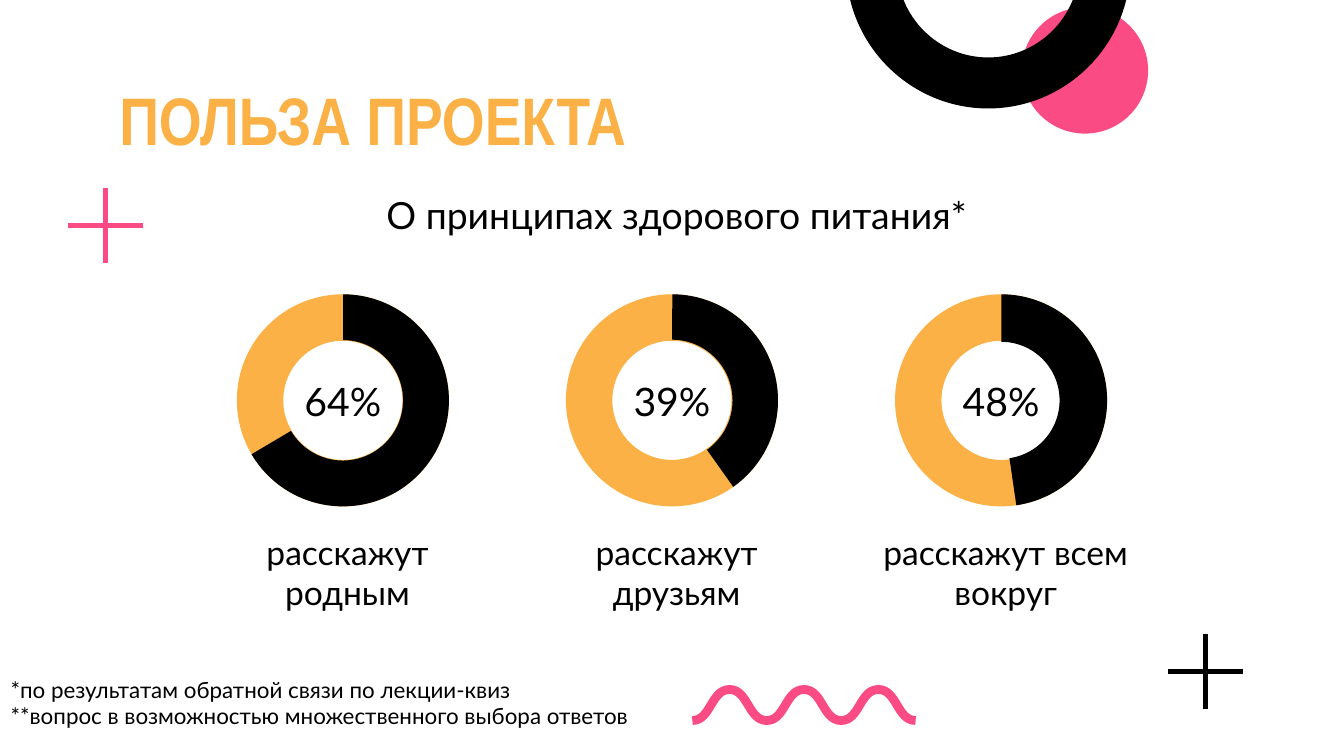
from dataclasses import dataclass

from lxml.etree import SubElement
from pptx import Presentation
from pptx.dml.color import RGBColor
from pptx.enum.shapes import MSO_CONNECTOR, MSO_SHAPE
from pptx.enum.text import MSO_ANCHOR, PP_ALIGN
from pptx.oxml.ns import qn
from pptx.util import Pt


@dataclass(frozen=True)
class Theme:
    orange: RGBColor = RGBColor(0xFB, 0xB1, 0x46)
    pink: RGBColor = RGBColor(0xFA, 0x4B, 0x84)
    black: RGBColor = RGBColor(0, 0, 0)
    heading_font: str = "Arial Narrow"
    body_font: str = "Lato"
    title_size: int = 36
    percent_size: int = 21
    subtitle_size: int = 20
    caption_size: int = 18
    note_size: int = 12


theme = Theme()
deck = Presentation()
deck.slide_width, deck.slide_height = Pt(720), Pt(405)
page = deck.slides.add_slide(deck.slide_layouts[5])
shapes = page.shapes


def add_text(left, top, width, height, lines, size, align=PP_ALIGN.CENTER, anchor=MSO_ANCHOR.MIDDLE):
    frame = shapes.add_textbox(Pt(left), Pt(top), Pt(width), Pt(height)).text_frame
    frame.word_wrap = True
    frame.vertical_anchor = anchor
    frame.margin_left = frame.margin_right = frame.margin_top = frame.margin_bottom = Pt(7.2)
    frame.text = "\n".join(lines)
    for para in frame.paragraphs:
        para.alignment = align
        para.font.name = theme.body_font
        para.font.size = Pt(size)
        para.font.color.rgb = theme.black
    return frame


def add_curve(start, segments, close):
    """Draw segments of one point as lines and of three points as Bézier curves."""
    builder = shapes.build_freeform(Pt(start[0]), Pt(start[1]))
    points = [(Pt(x), Pt(y)) for segment in segments for x, y in segment]
    builder.add_line_segments(points, close=close)
    shape = builder.convert_to_shape()
    shape.shadow.inherit = False
    lines = iter(list(shape._element.iter(qn("a:lnTo"))))
    for segment in segments:
        parts = [next(lines) for _ in segment]
        if len(parts) == 3:
            curve = SubElement(parts[0].getparent(), qn("a:cubicBezTo"))
            parts[0].addprevious(curve)
            for part in parts:
                curve.append(part[0])
                part.getparent().remove(part)
    return shape


# Corner decoration: a pink disc behind a black half ring
disc = shapes.add_shape(MSO_SHAPE.OVAL, Pt(547.4), Pt(3.9), Pt(67.7), Pt(67.7))
disc.shadow.inherit = False
disc.fill.solid()
disc.fill.fore_color.rgb = theme.pink
disc.line.fill.background()

ring_x, ring_y = 529.4, -18
ring_segments = []
for radius, side in [(76.1, 1), (48.8, -1)]:
    pull = radius * 0.55
    start_x, end_x, bottom = ring_x + side * radius, ring_x - side * radius, ring_y + radius
    ring_segments += [
        [(start_x, ring_y)],
        [(start_x, ring_y + pull), (ring_x + side * pull, bottom), (ring_x, bottom)],
        [(ring_x - side * pull, bottom), (end_x, ring_y + pull), (end_x, ring_y)],
    ]
ring = add_curve(ring_segments[0][0], ring_segments[1:], close=True)
ring.fill.solid()
ring.fill.fore_color.rgb = theme.black
ring.line.fill.background()

# Wave: six half periods
wave_left, wave_top, wave_bottom, half_period = 370.9, 369.4, 386, 19.93
wave_segments = []
for step in range(6):
    x = wave_left + step * half_period
    middle = x + half_period / 2
    before, after = (wave_top, wave_bottom) if step % 2 else (wave_bottom, wave_top)
    wave_segments.append([(middle, before), (middle, after), (x + half_period, after)])
wave = add_curve((wave_left, wave_bottom), wave_segments, close=False)
wave.fill.background()
wave.line.color.rgb = theme.pink
wave.line.width = Pt(4.73)

# Plus signs
arm = 20.1
for x, y, color in [(56.6, 120.8, theme.pink), (645.8, 359.8, theme.black)]:
    for dx, dy in [(0, arm), (arm, 0)]:
        stroke = shapes.add_connector(
            MSO_CONNECTOR.STRAIGHT, Pt(x - dx), Pt(y - dy), Pt(x + dx), Pt(y + dy)
        )
        stroke.line.color.rgb = color
        stroke.line.width = Pt(2.46)
        SubElement(stroke._element.spPr, qn("a:effectLst"))

# Headings
title = shapes.title
title.left, title.top, title.width, title.height = Pt(56.7), Pt(34.6), Pt(607), Pt(56.2)
frame = title.text_frame
frame.text = "ПОЛЬЗА ПРОЕКТА"
frame.vertical_anchor = MSO_ANCHOR.TOP
frame.margin_left = frame.margin_right = frame.margin_top = frame.margin_bottom = Pt(7.2)
para = frame.paragraphs[0]
para.alignment = PP_ALIGN.LEFT
para.font.name = theme.heading_font
para.font.size = Pt(theme.title_size)
para.font.bold = True
para.font.color.rgb = theme.orange

add_text(193.7, 89.3, 337.7, 51.1, ["О принципах здорового питания*"], theme.subtitle_size)

# Gauges: percentage, end angle of the black arc, thickness of the arc, caption
gauges = [
    ("64%", 149.44, 0.216, "расскажут родным"),
    ("39%", 54.67, 0.214, "расскажут друзьям"),
    ("48%", 81.73, 0.224, "расскажут всем вокруг"),
]
gauge_size, gauge_top, gauge_step = 113.6, 157.7, 176.3
degree = 0.6  # one degree in adjustment units
for index, (percent, end_angle, thickness, caption) in enumerate(gauges):
    center = 360 + (index - 1) * gauge_step
    gauge_parts = [
        (MSO_SHAPE.DONUT, [0.219], theme.orange),
        (MSO_SHAPE.BLOCK_ARC, [270.21 * degree, end_angle * degree, thickness], theme.black),
    ]
    for kind, adjustments, color in gauge_parts:
        part = shapes.add_shape(
            kind, Pt(center - gauge_size / 2), Pt(gauge_top), Pt(gauge_size), Pt(gauge_size)
        )
        for number, value in enumerate(adjustments):
            part.adjustments[number] = value
        part.shadow.inherit = False
        part.fill.solid()
        part.fill.fore_color.rgb = color
        part.line.fill.background()
    add_text(center - 32, 182.2, 64, 64.8, [percent], theme.percent_size)
    add_text(center - 82.8, 277.7, 170.6, 35.3, [caption], theme.caption_size, anchor=MSO_ANCHOR.TOP)

# Footnotes
notes = add_text(
    -1.4, 358, 390.2, 51.1,
    ["*по результатам обратной связи по лекции-квиз",
     "**вопрос в возможностью множественного выбора ответов"],
    theme.note_size, align=PP_ALIGN.LEFT,
)
notes.margin_bottom = Pt(21.6)

deck.save("out.pptx")
